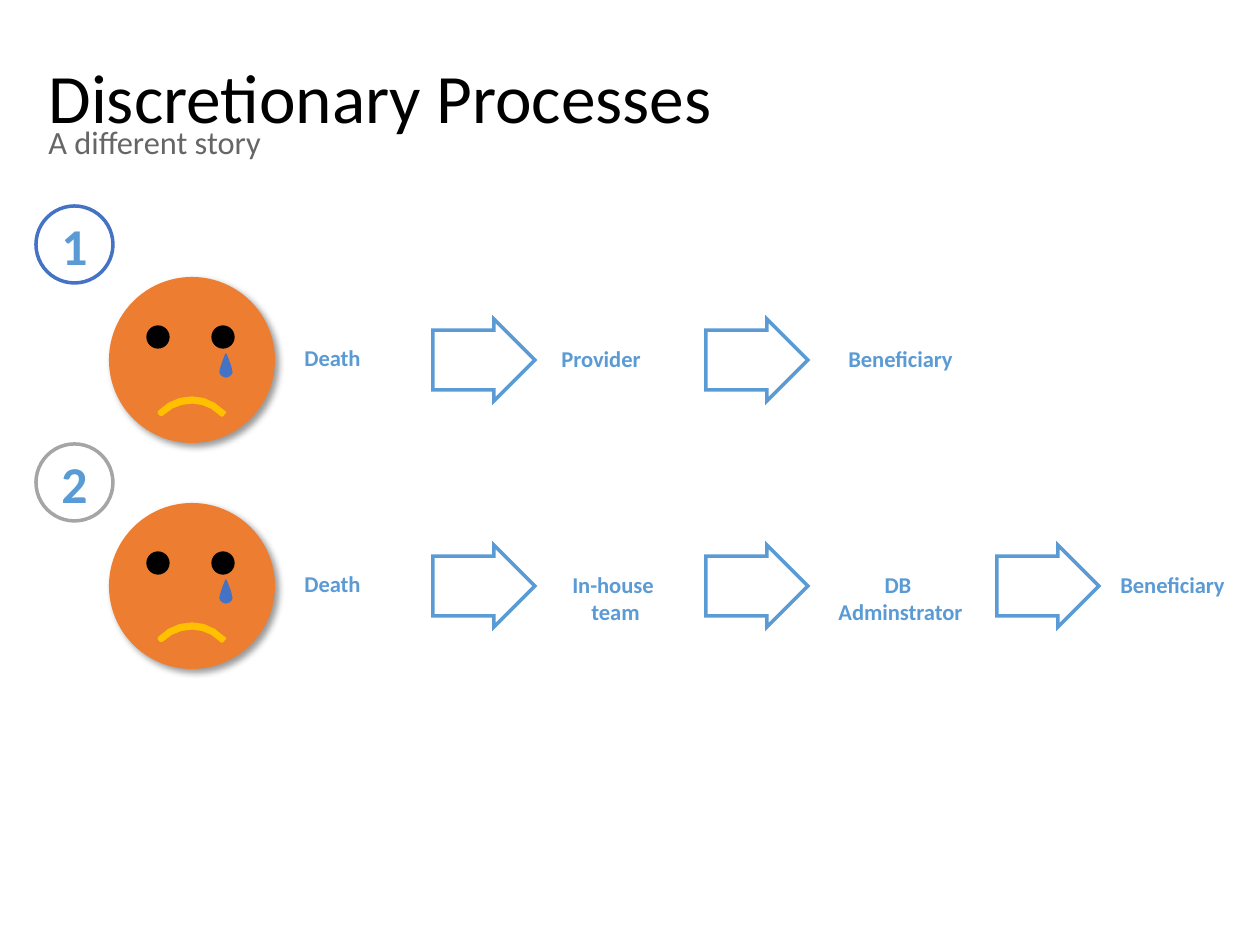
import pptx
import pptx.util
import pptx.dml.color
import pptx.enum.shapes
import pptx.enum.text
import pptx.oxml.ns
from lxml import etree

SHAPE = pptx.enum.shapes.MSO_SHAPE
ALIGN = pptx.enum.text.PP_ALIGN
ANCHOR = pptx.enum.text.MSO_ANCHOR
qn = pptx.oxml.ns.qn
EMU_PER_PX = 914400 / 126

BLUE, NAVY, GREY = "5B9BD5", "4472C4", "A5A5A5"
ORANGE, YELLOW, BLACK, WHITE = "ED7D31", "FFC000", "000000", "FFFFFF"

# Cubic outlines, relative to the top left of the features: start, then segments
MOUTH = [(112, 139),
         [(111, 139), (110, 138), (109, 137)], [(102, 130), (92, 126), (82, 126)],
         [(71, 126), (61, 130), (54, 137)], [(52, 139), (50, 139), (49, 137)],
         [(48, 136), (48, 135), (49, 134)], [(58, 125), (69, 120), (82, 120)],
         [(94, 120), (105, 125), (114, 134)], [(116, 135), (116, 136), (114, 137)],
         [(114, 138), (113, 139), (112, 139)]]
TEAR = [(122, 95),
        [(122, 97), (119, 100), (116, 100)], [(113, 100), (110, 97), (110, 95)],
        [(110, 91), (116, 77), (116, 77)], [(116, 77), (122, 91), (122, 95)]]
CURVE_STEPS = 3

FACE_LEFT, FACE_SIZE = 109, 166
FEATURES_LEFT = 110
ARROW_W, ARROW_H = 102, 82

# Per process: badge top, badge colour, face top, arrow lefts,
# labels as (lines, left, width, alignment)
PROCESSES = [
    (206, NAVY, 277, [433, 706],
     [(["Death"], 292, 82, ALIGN.LEFT),
      (["Provider"], 549, 106, ALIGN.LEFT),
      (["Beneficiary"], 784, 233, ALIGN.CENTER)]),
    (444, GREY, 503, [433, 706, 997],
     [(["Death"], 292, 82, ALIGN.LEFT),
      (["In-house ", "team"], 559, 113, ALIGN.CENTER),
      (["DB ", "Adminstrator"], 784, 233, ALIGN.CENTER),
      (["Beneficiary"], 1056, 233, ALIGN.CENTER)]),
]


def px(length):
    return pptx.util.Emu(round(length * EMU_PER_PX))


def rgb(color):
    return pptx.dml.color.RGBColor.from_string(color)


def paint(shape, fill=None, line=None, weight=0.75):
    shape.shadow.inherit = False
    if fill:
        shape.fill.solid()
        shape.fill.fore_color.rgb = rgb(fill)
    else:
        shape.fill.background()
    if line:
        shape.line.color.rgb = rgb(line)
        shape.line.width = pptx.util.Pt(weight)
    else:
        shape.line.fill.background()


def add_preset(slide, preset, left, top, width, height, **colors):
    shape = slide.shapes.add_shape(preset, px(left), px(top), px(width), px(height))
    paint(shape, **colors)
    return shape


def add_outline(slide, outline, left, top, color):
    """Draw a closed outline of cubic segments as a polygon."""
    start, *segments = outline
    points = [start]
    for segment in segments:
        curve = [points[-1], *segment]
        for step in range(1, CURVE_STEPS + 1):
            t = step / CURVE_STEPS
            weights = [(1 - t) ** 3, 3 * t * (1 - t) ** 2, 3 * t * t * (1 - t), t ** 3]
            points.append(tuple(sum(w * p[axis] for w, p in zip(weights, curve))
                                for axis in (0, 1)))
    points = [(px(left + x), px(top + y)) for x, y in points]
    builder = slide.shapes.build_freeform(*points[0])
    builder.add_line_segments(points[1:-1], close=True)
    paint(builder.convert_to_shape(), fill=color, line=color)


def add_shadow(shape):
    effects = shape.element.spPr.find(qn("a:effectLst"))
    shadow = etree.SubElement(effects, qn("a:outerShdw"), blurRad="50800",
                              dist="38100", dir="2700000", algn="tl", rotWithShape="0")
    color = etree.SubElement(shadow, qn("a:srgbClr"), val=BLACK)
    etree.SubElement(color, qn("a:alpha"), val="40000")


def write(paragraph, lines, size, color, bold=False, align=ALIGN.LEFT):
    paragraph.alignment = align
    for index, line in enumerate(lines):
        if index:
            paragraph.add_line_break()
        run = paragraph.add_run()
        run.text = line
        run.font.name = "Calibri"
        run.font.size = pptx.util.Pt(size)
        run.font.bold = bold
        run.font.color.rgb = rgb(color)


def add_text(slide, lines, left, top, width, height, size, color,
             bold=False, align=ALIGN.LEFT, wrap=True, anchor=ANCHOR.TOP):
    frame = slide.shapes.add_textbox(px(left), px(top), px(width), px(height)).text_frame
    frame.word_wrap = wrap
    frame.vertical_anchor = anchor
    write(frame.paragraphs[0], lines, size, color, bold, align)
    return frame.paragraphs[0]


def add_heading(slide):
    title = add_text(slide, ["Discretionary Processes"], 36, 82, 1188, 38, 39.6, BLACK,
                     anchor=ANCHOR.MIDDLE)
    subtitle = add_text(slide, ["A different story"], 36, 120, 1188, 45, 18.5, "666666")
    title.line_spacing = subtitle.line_spacing = 0.9
    subtitle.space_before = pptx.util.Pt(10)


def add_badge(slide, number, top, color):
    badge = add_preset(slide, SHAPE.OVAL, 36, top, 77, 77, line=color, weight=2)
    frame = badge.text_frame
    frame.margin_left = frame.margin_right = frame.margin_top = frame.margin_bottom = 0
    frame.vertical_anchor = ANCHOR.MIDDLE
    write(frame.paragraphs[0], [str(number)], 29.5, BLUE, True, ALIGN.CENTER)


def add_sad_face(slide, top):
    head = add_preset(slide, SHAPE.OVAL, FACE_LEFT, top, FACE_SIZE, FACE_SIZE, fill=ORANGE)
    add_shadow(head)
    for eye_left in (37, 102):
        add_preset(slide, SHAPE.OVAL, FEATURES_LEFT + eye_left, top + 49, 22, 22,
                   fill=BLACK, line=BLACK)
    add_outline(slide, MOUTH, FEATURES_LEFT, top, YELLOW)
    add_outline(slide, TEAR, FEATURES_LEFT, top, NAVY)


def add_arrow(slide, left, top):
    arrow = add_preset(slide, SHAPE.RIGHT_ARROW, left, top, ARROW_W, ARROW_H,
                       fill=WHITE, line=BLUE, weight=2)
    arrow.adjustments[0] = 0.73
    arrow.adjustments[1] = 0.5
    # Sharp corners
    etree.SubElement(arrow.element.spPr.find(qn("a:ln")), qn("a:miter"), lim="800000")


def main():
    deck = pptx.Presentation()
    deck.slide_width, deck.slide_height = px(1260), px(945)
    slide = deck.slides.add_slide(deck.slide_layouts[6])

    add_heading(slide)
    for number, process in enumerate(PROCESSES, start=1):
        badge_top, badge_color, face_top, arrow_lefts, labels = process
        add_sad_face(slide, face_top)
        add_badge(slide, number, badge_top, badge_color)
        for left in arrow_lefts:
            add_arrow(slide, left, face_top + 42)
        for index, (lines, left, width, align) in enumerate(labels):
            label_top = face_top + (62 if index else 61)
            add_text(slide, lines, left, label_top, width, 13 + 27 * len(lines),
                     12.9, BLUE, bold=True, align=align, wrap=width > 200)

    deck.save("out.pptx")


if __name__ == "__main__":
    main()
